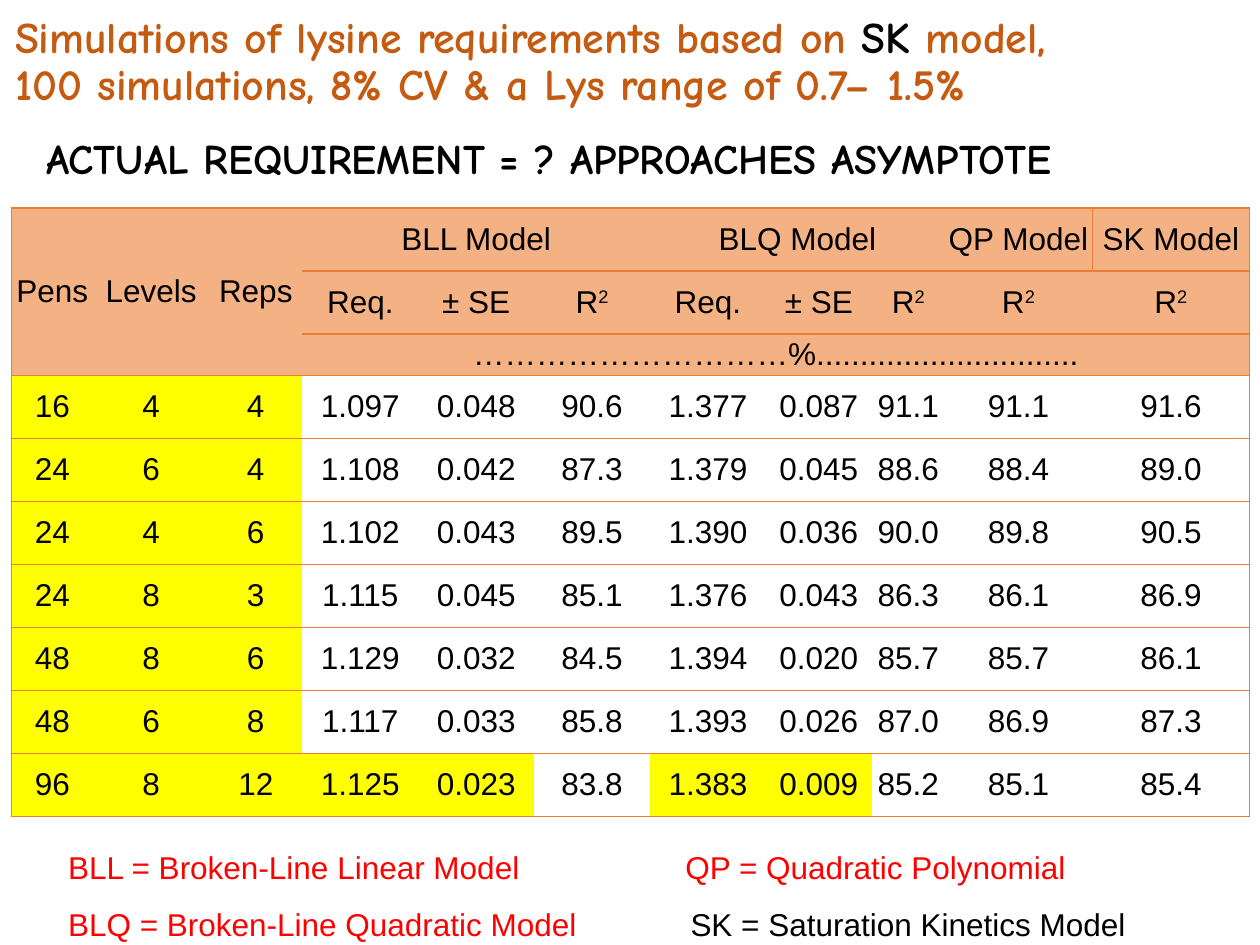
from lxml import etree
from pptx import Presentation
from pptx.dml.color import RGBColor as RGB
from pptx.enum.text import MSO_ANCHOR as Anchor, MSO_AUTO_SIZE as Auto, PP_ALIGN as Align
from pptx.oxml.ns import qn
from pptx.util import Inches, Pt

COLORS = {"brown": "C55A11", "black": "000000", "red": "FF0000", "line": "ED7D31",
          "head": "F4B183", "mark": "FFFF00", "plain": "FFFFFF"}
NO_GRID = "{2D5ABB26-0587-4C30-8999-92F81FD0307C}"
WIDTHS = [0.65, 0.92, 0.74, 0.92, 0.92, 0.92, 0.92, 0.84, 0.58, 1.17, 1.25]
HEIGHTS = [0.5, 0.5, 0.33] + [0.5] * 7
MODELS = {0: "Pens", 1: "Levels", 2: "Reps", 3: "BLL Model", 6: "BLQ Model",
          9: "QP Model", 10: "SK Model"}
STATS = ["Req.", "± SE", "R²", "Req.", "± SE", "R²", "R²", "R²"]
DOTS = "…………………………%.............................."
MERGES = [(0, 0, 2, 0), (0, 1, 2, 1), (0, 2, 2, 2), (0, 3, 0, 5), (0, 6, 0, 8), (2, 3, 2, 10)]
DATA = """
16 4 4 1.097 0.048 90.6 1.377 0.087 91.1 91.1 91.6
24 6 4 1.108 0.042 87.3 1.379 0.045 88.6 88.4 89.0
24 4 6 1.102 0.043 89.5 1.390 0.036 90.0 89.8 90.5
24 8 3 1.115 0.045 85.1 1.376 0.043 86.3 86.1 86.9
48 8 6 1.129 0.032 84.5 1.394 0.020 85.7 85.7 86.1
48 6 8 1.117 0.033 85.8 1.393 0.026 87.0 86.9 87.3
96 8 12 1.125 0.023 83.8 1.383 0.009 85.2 85.1 85.4
"""


def write(para, text, size=18, font="Arial", color="black", bold=False, raised=False):
    run = para.add_run()
    run.text = text
    run.font.size = Pt(size)
    run.font.name = font
    run.font.bold = bold
    run.font.color.rgb = RGB.from_string(COLORS[color])
    if raised:
        run.font._element.set("baseline", "30000")


def edge(cell, sides, width=1):
    """Draw the named sides (of L, R, T, B, in that order) of a cell."""
    props = cell._tc.get_or_add_tcPr()
    for spot, side in enumerate(sides):
        line = etree.Element(qn(f"a:ln{side}"), w=str(Pt(width)))
        fill = etree.SubElement(line, qn("a:solidFill"))
        etree.SubElement(fill, qn("a:srgbClr"), val=COLORS["line"])
        props.insert(spot, line)


def shade(row, col):
    if row < 3:
        return "head"
    last = row == len(HEIGHTS) - 1
    return "mark" if col < 3 or last and col in (3, 4, 6, 7) else "plain"


class Deck:
    hand = {"font": "Comic Neue", "bold": True}

    def __init__(self):
        self.prs = Presentation()
        self.prs.slide_width, self.prs.slide_height = Inches(10), Inches(7.5)
        self.slide = self.prs.slides.add_slide(self.prs.slide_layouts[5])

    def title(self, box, lines):
        shape = self.slide.shapes.title
        shape.left, shape.top, shape.width, shape.height = map(Inches, box)
        frame = shape.text_frame
        frame.auto_size = Auto.NONE
        frame.vertical_anchor = Anchor.MIDDLE
        para = frame.paragraphs[0]
        para.alignment = Align.LEFT
        para.line_spacing = 0.9
        for spot, line in enumerate(lines):
            if spot:
                para.add_line_break()
            for text, color in line:
                write(para, text, size=25, color=color, **self.hand)

    def box(self, box, wrap=True):
        frame = self.slide.shapes.add_textbox(*map(Inches, box)).text_frame
        frame.word_wrap = wrap
        frame.auto_size = Auto.SHAPE_TO_FIT_TEXT
        return frame

    def heading(self, box, text):
        write(self.box(box, wrap=False).paragraphs[0], text, size=24, **self.hand)

    def legend(self, box, rows):
        """Each row holds a left text, a tab stop, a right text and its colour."""
        frame = self.box(box)
        frame.margin_left = Inches(0.6)
        for spot, (left, stop, right, color) in enumerate(rows):
            para = frame.add_paragraph() if spot else frame.paragraphs[0]
            para.line_spacing = 1.5
            tabs = etree.SubElement(para._p.get_or_add_pPr(), qn("a:tabLst"))
            etree.SubElement(tabs, qn("a:tab"), pos=str(Inches(stop)), algn="l")
            write(para, left + "\t", color="red")
            write(para, right, color=color)

    def cell(self, cell, text, fill):
        cell.fill.solid()
        cell.fill.fore_color.rgb = RGB.from_string(COLORS[fill])
        cell.margin_left = cell.margin_right = cell.margin_top = cell.margin_bottom = 0
        cell.vertical_anchor = Anchor.MIDDLE
        para = cell.text_frame.paragraphs[0]
        para.alignment = Align.CENTER
        if text == "R²":
            write(para, "R")
            write(para, "2", raised=True)
        elif text:
            write(para, text)

    def table(self, box, texts):
        rows, cols = len(HEIGHTS), len(WIDTHS)
        table = self.slide.shapes.add_table(rows, cols, *map(Inches, box)).table
        table.first_row = table.horz_banding = False
        table._tbl.tblPr.find(qn("a:tableStyleId")).text = NO_GRID
        for col, width in zip(table.columns, WIDTHS):
            col.width = Inches(width)
        for row, height in zip(table.rows, HEIGHTS):
            row.height = Inches(height)
        for top, left, bottom, right in MERGES:
            table.cell(top, left).merge(table.cell(bottom, right))
        for row in range(rows):
            for col in range(cols):
                cell = table.cell(row, col)
                self.cell(cell, texts[row].get(col, ""), shade(row, col))
                end = col + (cell.span_width if cell.is_merge_origin else 1)
                inner = cell.is_spanned and col < 3
                sides = "L" * (col == 0) + "R" * (end == cols) + "TB" * (not inner)
                edge(cell, sides)
        edge(table.cell(0, cols - 1), "L", width=0.5)


def main():
    deck = Deck()
    deck.title((0.02, 0, 9.88, 1), [
        [("Simulations of lysine requirements based on ", "brown"), ("SK ", "black"),
         ("model,", "brown")],
        [("100 simulations, 8% CV & a Lys range of 0.7– 1.5%", "brown")]])
    texts = [MODELS, dict(enumerate(STATS, 3)), {3: DOTS}]
    texts += [dict(enumerate(line.split())) for line in DATA.strip().splitlines()]
    deck.table((0.09, 1.65, 9.83, 4.83), texts)
    deck.legend((-0.06, 6.53, 10.08, 1.01), [
        ("BLL = Broken-Line Linear Model", 4.9, "QP = Quadratic Polynomial", "red"),
        ("BLQ = Broken-Line Quadratic Model", 4.94, "SK = Saturation Kinetics Model", "black")])
    deck.heading((0.27, 1, 9.65, 0.5), "ACTUAL REQUIREMENT = ? APPROACHES ASYMPTOTE")
    deck.prs.save("out.pptx")


if __name__ == "__main__":
    main()
